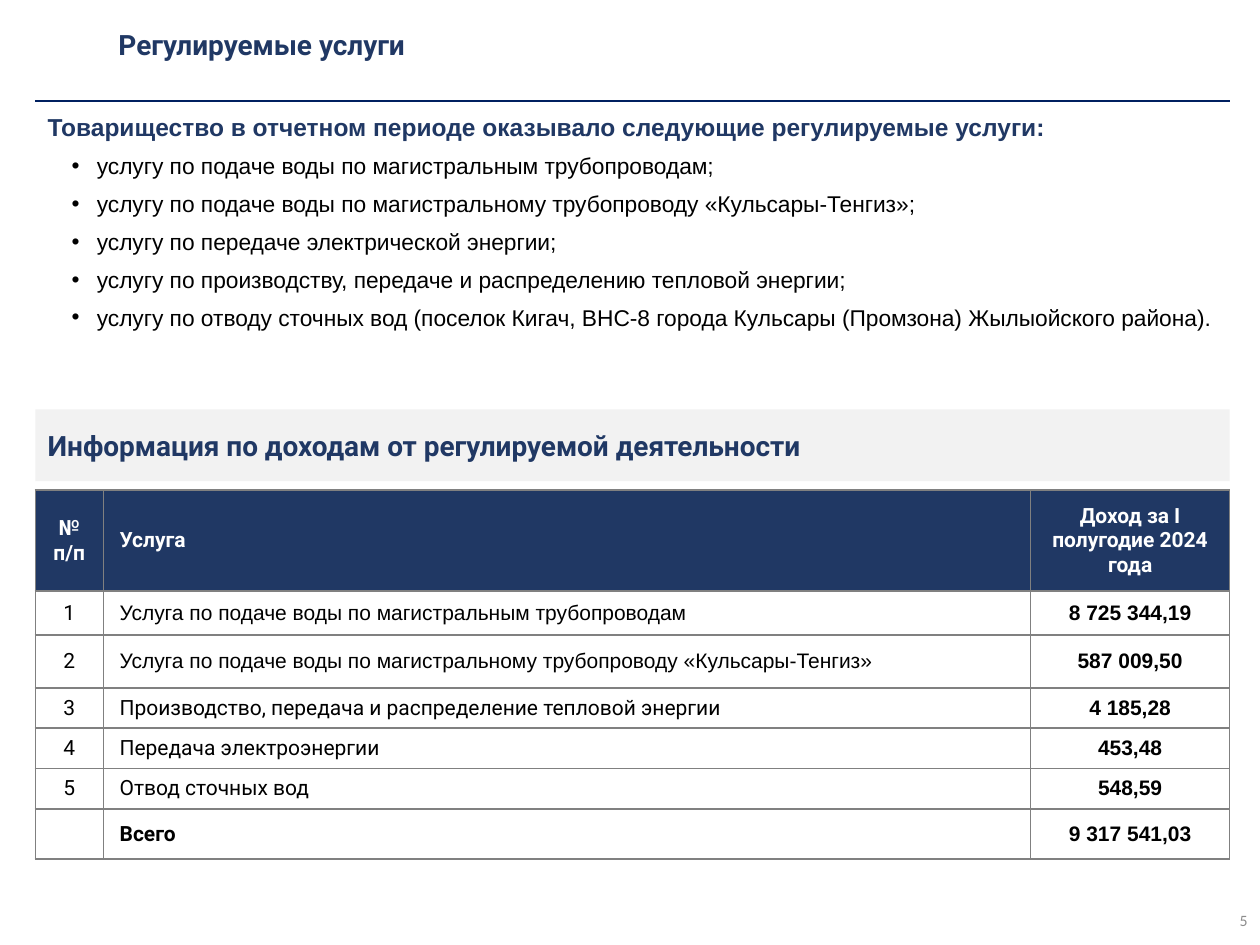
from lxml import etree
from pptx import Presentation
from pptx import util as u
from pptx.dml.color import RGBColor
from pptx.enum import shapes, text
from pptx.oxml import ns

NAVY, RULE, GREY, BAND = "203864", "002060", "808080", "F2F2F2"
BLACK, WHITE, PAGE_GREY = "000000", "FFFFFF", "8C8C8C"
LEFT, WIDTH = 0.28, 9.48
ALIGN, MIDDLE = text.PP_ALIGN, text.MSO_ANCHOR.MIDDLE

SERVICES = [
    "услугу по подаче воды по магистральным трубопроводам;",
    "услугу по подаче воды по магистральному трубопроводу «Кульсары-Тенгиз»;",
    "услугу по передаче электрической энергии;",
    "услугу по производству, передаче и распределению тепловой энергии;",
    "услугу по отводу сточных вод (поселок Кигач, ВНС-8 города Кульсары "
    "(Промзона) Жылыойского района).",
]
COLUMNS = [0.54, 7.36, 1.58]
ROWS = [0.8, 0.35, 0.42, 0.32, 0.32, 0.32, 0.4]
HEADER = ["№ п/п", "Услуга", "Доход за I полугодие 2024 года"]
# Service, font of its name, income
INCOME = [
    ("Услуга по подаче воды по магистральным трубопроводам", "Arial", "8 725 344,19"),
    ("Услуга по подаче воды по магистральному трубопроводу «Кульсары-Тенгиз»",
     "Arial", "587 009,50"),
    ("Производство, передача и распределение тепловой энергии", "Roboto", "4 185,28"),
    ("Передача электроэнергии", "Roboto", "453,48"),
    ("Отвод сточных вод", "Roboto", "548,59"),
]
TOTAL = ("Всего", "9 317 541,03")


def colour(value):
    return RGBColor.from_string(value)


def inches(box):
    return [u.Inches(length) for length in box]


def add_xml(parent, tag, **attributes):
    return etree.SubElement(parent, ns.qn(tag), attributes)


def write(paragraph, words, size, face, ink, bold=False, align=ALIGN.LEFT):
    paragraph.text = words
    paragraph.alignment = align
    font = paragraph.font
    font.size, font.name, font.bold = u.Pt(size), face, bold
    font.color.rgb = colour(ink)


def set_title(slide, box):
    title = slide.shapes.title
    title.left, title.top, title.width, title.height = inches(box)
    frame = title.text_frame
    frame.auto_size = text.MSO_AUTO_SIZE.NONE
    frame.vertical_anchor = MIDDLE
    write(frame.paragraphs[0], "Регулируемые услуги", 16, "Roboto", NAVY, True)


def add_title_rule(slide, left, top, width):
    ends = inches((left, top, left + width, top))
    rule = slide.shapes.add_connector(shapes.MSO_CONNECTOR.STRAIGHT, *ends)
    rule.line.color.rgb = colour(RULE)
    rule.line.width = u.Pt(1)
    add_xml(rule._element.spPr, "a:effectLst")


def add_services(slide, box):
    frame = slide.shapes.add_textbox(*inches(box)).text_frame
    frame.word_wrap = True
    write(frame.paragraphs[0],
          "Товарищество в отчетном периоде оказывало следующие регулируемые услуги:",
          14, "Arial", NAVY, True, ALIGN.JUSTIFY)
    for service in SERVICES:
        item = frame.add_paragraph()
        properties = item._p.get_or_add_pPr()
        properties.set("marL", str(u.Inches(0.39)))
        properties.set("indent", str(u.Inches(-0.2)))
        item.space_before = u.Pt(6)
        add_xml(properties, "a:buFont", typeface="Arial")
        add_xml(properties, "a:buChar", char="•")
        write(item, service, 13, "Arial", BLACK, align=ALIGN.JUSTIFY)


def add_income_heading(slide, box):
    band = slide.shapes.add_shape(shapes.MSO_SHAPE.RECTANGLE, *inches(box))
    band.shadow.inherit = False
    band.fill.solid()
    band.fill.fore_color.rgb = colour(BAND)
    band.line.fill.background()
    band.text_frame.word_wrap = True
    band.text_frame.vertical_anchor = MIDDLE
    write(band.text_frame.paragraphs[0],
          "Информация по доходам от регулируемой деятельности",
          16, "Roboto", NAVY, True)


def format_cell(cell, side_margin, fill):
    cell.vertical_anchor = MIDDLE
    cell.margin_left = cell.margin_right = u.Inches(side_margin)
    cell.margin_top = cell.margin_bottom = u.Inches(0.05)
    properties = cell._tc.get_or_add_tcPr()
    for side in ("a:lnL", "a:lnR", "a:lnT", "a:lnB"):
        border = add_xml(properties, side, w=str(u.Pt(1)))
        add_xml(add_xml(border, "a:solidFill"), "a:srgbClr", val=GREY)
    if fill:
        cell.fill.solid()
        cell.fill.fore_color.rgb = colour(fill)
    else:
        cell.fill.background()


def add_income_table(slide, box):
    table = slide.shapes.add_table(len(ROWS), len(COLUMNS), *inches(box)).table
    for column, width in zip(table.columns, COLUMNS):
        column.width = u.Inches(width)
    for row, height in zip(table.rows, ROWS):
        row.height = u.Inches(height)

    # Each entry: words, font, colour, bold
    grid = [[(words, "Roboto", WHITE, True) for words in HEADER]]
    for number, (service, face, income) in enumerate(INCOME, 1):
        grid.append([(str(number), "Roboto", BLACK, False),
                     (service, face, BLACK, False),
                     (income, "Arial", BLACK, True)])
    grid.append([("", "Roboto", BLACK, False),
                 (TOTAL[0], "Roboto", BLACK, True),
                 (TOTAL[1], "Arial", BLACK, True)])

    aligns = [ALIGN.CENTER, ALIGN.LEFT, ALIGN.CENTER]
    for r, entries in enumerate(grid):
        for c, (words, face, ink, bold) in enumerate(entries):
            cell = table.cell(r, c)
            format_cell(cell, 0.1 if c == 2 else 0.13, NAVY if r == 0 else None)
            write(cell.text_frame.paragraphs[0], words, 12, face, ink, bold, aligns[c])


def add_page_number(slide, box):
    frame = slide.shapes.add_textbox(*inches(box)).text_frame
    frame.word_wrap = True
    frame.vertical_anchor = MIDDLE
    write(frame.paragraphs[0], "5", 9, "Calibri", PAGE_GREY, align=ALIGN.RIGHT)


def main():
    deck = Presentation()
    deck.slide_width, deck.slide_height = u.Inches(10), u.Inches(7.5)
    slide = deck.slides.add_slide(deck.slide_layouts[5])

    # Title and rule
    set_title(slide, (0.84, 0.14, 8.93, 0.42))
    add_title_rule(slide, LEFT, 0.8, WIDTH)
    # Services, then income
    add_services(slide, (LEFT, 0.84, WIDTH, 1.85))
    add_income_heading(slide, (LEFT, 3.25, WIDTH, 0.57))
    add_income_table(slide, (LEFT, 3.89, WIDTH, sum(ROWS)))
    # Footer
    add_page_number(slide, (7.75, 7.1, 2.25, 0.4))

    deck.save("out.pptx")


if __name__ == "__main__":
    main()
